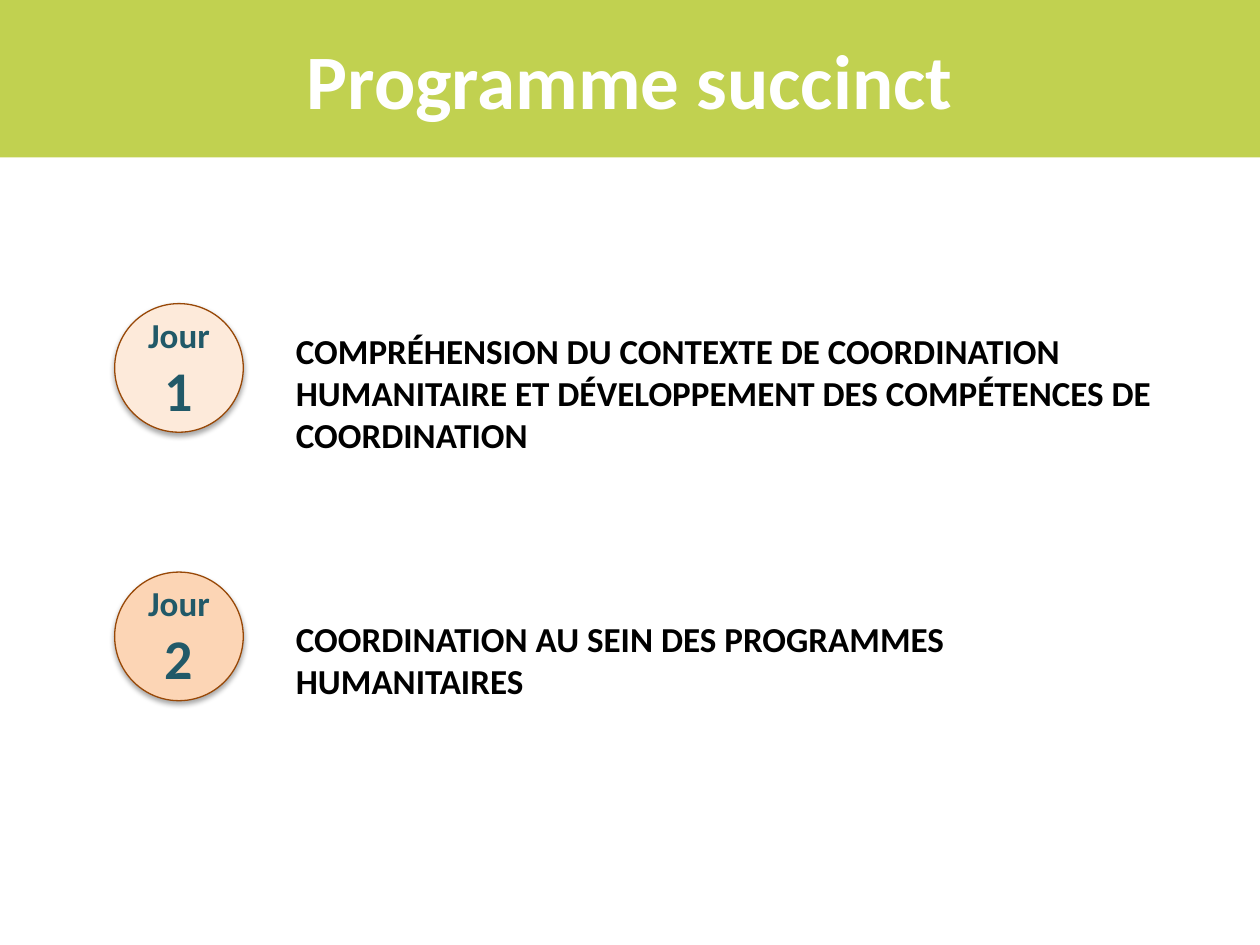
"""Build the short programme slide with one badge and one theme per day."""

from lxml.etree import SubElement
from pptx import Presentation
from pptx.dml.color import RGBColor
from pptx.enum.shapes import MSO_SHAPE
from pptx.enum.text import MSO_ANCHOR, PP_ALIGN
from pptx.oxml.ns import qn
from pptx.util import Pt

FONT = "Calibri"
WHITE = RGBColor(0xFF, 0xFF, 0xFF)
BLACK = RGBColor(0x00, 0x00, 0x00)
LIME = RGBColor(0xC1, 0xD1, 0x50)
TEAL = RGBColor(0x21, 0x59, 0x68)
BROWN = RGBColor(0x98, 0x48, 0x07)
PALE_PEACH = RGBColor(0xFD, 0xEA, 0xDA)
PEACH = RGBColor(0xFC, 0xD5, 0xB5)

SLIDE_WIDTH, SLIDE_HEIGHT = 720, 540
BADGE_LEFT, BADGE_SIZE = 65.5, 73.5
THEME_LEFT, THEME_WIDTH = 162, 517.7

DAYS = [
    ("1", PALE_PEACH, 173.5, 185, 80,
     "COMPRÉHENSION DU CONTEXTE DE COORDINATION HUMANITAIRE "
     "ET DÉVELOPPEMENT DES COMPÉTENCES DE COORDINATION"),
    ("2", PEACH, 326.9, 349.2, 32,
     "COORDINATION AU SEIN DES PROGRAMMES HUMANITAIRES"),
]


def write_text(shape, *parts, color, align=PP_ALIGN.LEFT, anchor=MSO_ANCHOR.TOP):
    frame = shape.text_frame
    frame.word_wrap = True
    frame.vertical_anchor = anchor
    paragraph = frame.paragraphs[0]
    paragraph.alignment = align
    for text, size in parts:
        run = paragraph.add_run()
        run.text = text
        run.font.name = FONT
        run.font.size = Pt(size)
        run.font.bold = True
        run.font.color.rgb = color


def add_filled_shape(shapes, kind, left, top, width, height, fill):
    shape = shapes.add_shape(kind, Pt(left), Pt(top), Pt(width), Pt(height))
    shape.shadow.inherit = False
    shape.fill.solid()
    shape.fill.fore_color.rgb = fill
    return shape


def add_soft_shadow(shape):
    effects = shape.element.spPr.find(qn("a:effectLst"))
    shadow = SubElement(effects, qn("a:outerShdw"), blurRad=str(Pt(3.1)),
                        dist=str(Pt(1.8)), dir="5400000", rotWithShape="0")
    color = SubElement(shadow, qn("a:srgbClr"), val=str(BLACK))
    SubElement(color, qn("a:alpha"), val="35000")


def add_title_band(shapes, title):
    band = add_filled_shape(shapes, MSO_SHAPE.RECTANGLE, 0, 0, SLIDE_WIDTH, 90, LIME)
    band.line.fill.background()
    write_text(band, (title, 44), color=WHITE, align=PP_ALIGN.CENTER,
               anchor=MSO_ANCHOR.MIDDLE)


def add_badge(shapes, number, top, fill):
    badge = add_filled_shape(shapes, MSO_SHAPE.OVAL, BADGE_LEFT, top,
                             BADGE_SIZE, BADGE_SIZE, fill)
    badge.line.color.rgb = BROWN
    badge.line.width = Pt(0.75)
    add_soft_shadow(badge)
    write_text(badge, ("Jour ", 20), (number, 32), color=TEAL,
               align=PP_ALIGN.CENTER, anchor=MSO_ANCHOR.MIDDLE)


def add_theme(shapes, theme, top, height):
    box = shapes.add_textbox(Pt(THEME_LEFT), Pt(top), Pt(THEME_WIDTH), Pt(height))
    write_text(box, (theme, 20), color=BLACK)


def main():
    presentation = Presentation()
    presentation.slide_width = Pt(SLIDE_WIDTH)
    presentation.slide_height = Pt(SLIDE_HEIGHT)
    slide = presentation.slides.add_slide(presentation.slide_layouts[6])
    add_title_band(slide.shapes, "Programme succinct")
    for number, fill, badge_top, theme_top, theme_height, theme in DAYS:
        day = slide.shapes.add_group_shape()
        add_badge(day.shapes, number, badge_top, fill)
        add_theme(day.shapes, theme, theme_top, theme_height)
    presentation.save("out.pptx")


if __name__ == "__main__":
    main()
